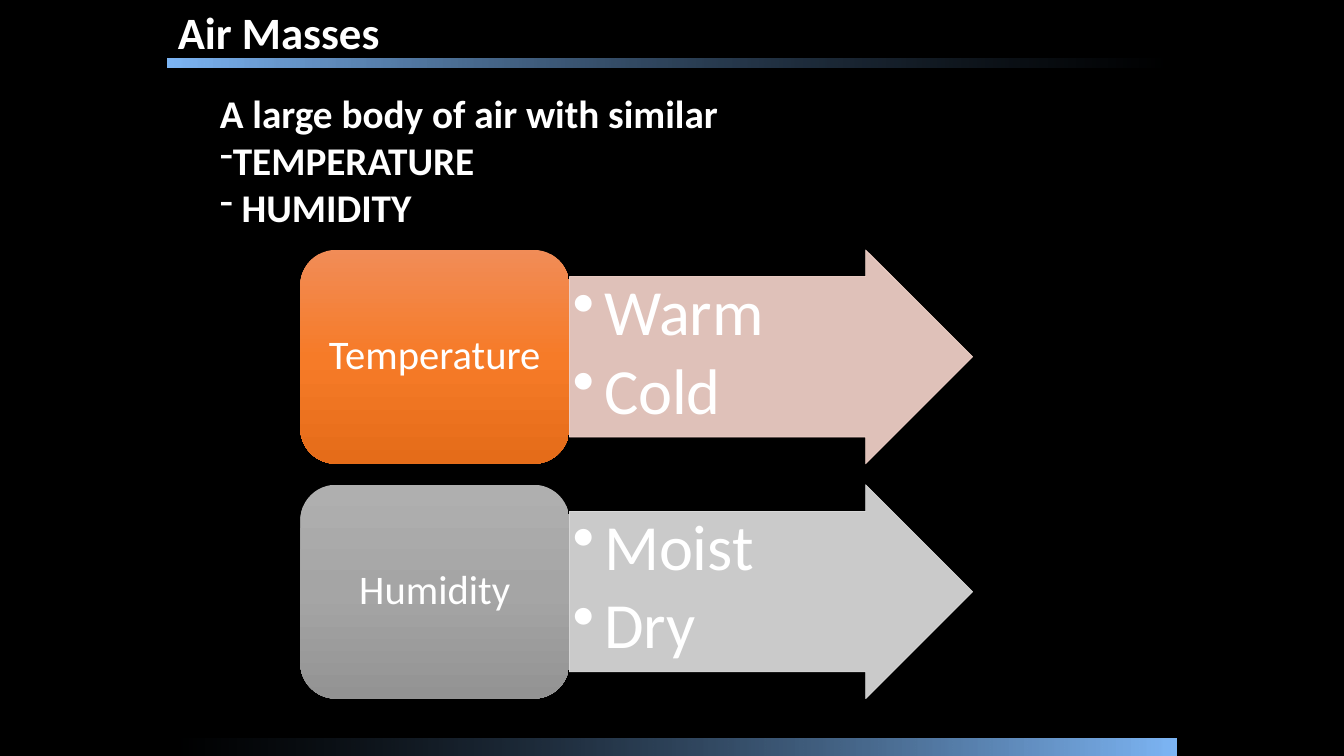
from pptx import Presentation
from pptx import util as u
from pptx.dml import color
from pptx.enum import shapes, text
from pptx.oxml import ns
from lxml import etree

TITLE = "Air Masses"
DEFINITION = [("A large body of air with similar", None), ("TEMPERATURE", "-"), (" HUMIDITY", "-")]
PROPERTIES = [
    {"name": "Temperature", "kinds": ["Warm", "Cold"],
     "stops": [(0, "F18C57"), (50, "F67B28"), (100, "E56C19")], "arrow": "F8D7CE"},
    {"name": "Humidity", "kinds": ["Moist", "Dry"],
     "stops": [(0, "AFAFAF"), (50, "A5A5A5"), (100, "939393")], "arrow": "E1E1E1"},
]
BAR_STOPS = [(0, "7EB7F6"), (100, "3A5572", 0)]
BARS = [(119.5, 41.5, 720, 6.5, 0), (120, 527.75, 720, 12.25, 180)]
FONT, WHITE, BLACK = "Calibri", "FFFFFF", "000000"
BOX_LEFT, BOX_TOP, BOX_WIDTH, ROW_HEIGHT, ROW_PITCH = 214.5, 178.5, 192.25, 152.75, 167.75
ARROW_WIDTH = 288

deck = Presentation()
deck.slide_width, deck.slide_height = u.Pt(960), u.Pt(540)
slide = deck.slides.add_slide(deck.slide_layouts[6])


def rgb(value):
    return color.RGBColor.from_string(value)


def add_child(parent, tag, **attributes):
    return etree.SubElement(parent, ns.qn(tag), **attributes)


def fade(color_node, percent):
    add_child(color_node, "a:alpha", val=str(percent * 1000))


def add_preset(preset, left, top, width, height):
    shape = slide.shapes.add_shape(preset, u.Pt(left), u.Pt(top), u.Pt(width), u.Pt(height))
    shape.shadow.inherit = False
    shape.line.fill.background()
    return shape


def fill_gradient(shape, stops, angle):
    shape.fill.gradient()
    shape.fill.gradient_angle = angle
    stop_list = shape._element.spPr.find(ns.qn("a:gradFill")).find(ns.qn("a:gsLst"))
    for old_stop in list(stop_list):
        stop_list.remove(old_stop)
    for position, tone, *opacity in stops:
        stop = add_child(stop_list, "a:gs", pos=str(position * 1000))
        tone_node = add_child(stop, "a:srgbClr", val=tone)
        if opacity:
            fade(tone_node, opacity[0])


def write(shape, lines, size, bold=False, align=text.PP_ALIGN.LEFT,
          anchor=text.MSO_ANCHOR.TOP, inset=(7.2, 3.6), spacing=None, after=0, hang=0):
    frame = shape.text_frame
    frame.word_wrap = True
    frame.vertical_anchor = anchor
    frame.margin_left = frame.margin_right = u.Pt(inset[0])
    frame.margin_top = frame.margin_bottom = u.Pt(inset[1])
    for index, (words, bullet) in enumerate(lines):
        paragraph = frame.paragraphs[0] if index == 0 else frame.add_paragraph()
        paragraph.alignment = align
        paragraph.line_spacing = spacing
        paragraph.space_after = u.Pt(after)
        run = paragraph.add_run()
        run.text = words
        run.font.name, run.font.size, run.font.bold = FONT, u.Pt(size), bold
        run.font.color.rgb = rgb(WHITE)
        if bullet:
            properties = paragraph._p.get_or_add_pPr()
            properties.set("marL", str(u.Pt(hang)))
            properties.set("indent", str(-u.Pt(hang)))
            add_child(properties, "a:buChar", char=bullet)


def add_text(left, top, width, height, lines, **form):
    box = slide.shapes.add_textbox(u.Pt(left), u.Pt(top), u.Pt(width), u.Pt(height))
    write(box, lines, **form)


def add_property(row, name, kinds, stops, arrow):
    top = BOX_TOP + row * ROW_PITCH
    kinds_arrow = add_preset(shapes.MSO_SHAPE.RIGHT_ARROW, BOX_LEFT + BOX_WIDTH, top,
                             ARROW_WIDTH, ROW_HEIGHT)
    kinds_arrow.adjustments[0], kinds_arrow.adjustments[1] = 0.75, 0.5
    kinds_arrow.line.width = u.Pt(0.5)
    for paint in (kinds_arrow.fill, kinds_arrow.line.fill):
        paint.solid()
        paint.fore_color.rgb = rgb(arrow)
    for tone_node in kinds_arrow._element.spPr.iter(ns.qn("a:srgbClr")):
        fade(tone_node, 90)
    write(kinds_arrow, [(kind, "•") for kind in kinds], size=46, inset=(2.25, 2.25),
          spacing=0.9, after=6.5, hang=22.5)

    name_box = add_preset(shapes.MSO_SHAPE.ROUNDED_RECTANGLE, BOX_LEFT, top, BOX_WIDTH, ROW_HEIGHT)
    fill_gradient(name_box, stops, 270)
    write(name_box, [(name, None)], size=29, align=text.PP_ALIGN.CENTER,
          anchor=text.MSO_ANCHOR.MIDDLE, inset=(8.5, 4.25), spacing=0.9)


slide.background.fill.solid()
slide.background.fill.fore_color.rgb = rgb(BLACK)
for *place, rotation in BARS:
    bar = add_preset(shapes.MSO_SHAPE.RECTANGLE, *place)
    bar.rotation = rotation
    fill_gradient(bar, BAR_STOPS, 0)
add_text(120, 0, 471, 45.5, [(TITLE, None)], size=32, bold=True)
add_text(150, 60, 672.5, 142, DEFINITION, size=28, bold=True)
for row, entry in enumerate(PROPERTIES):
    add_property(row, **entry)

deck.save("out.pptx")
